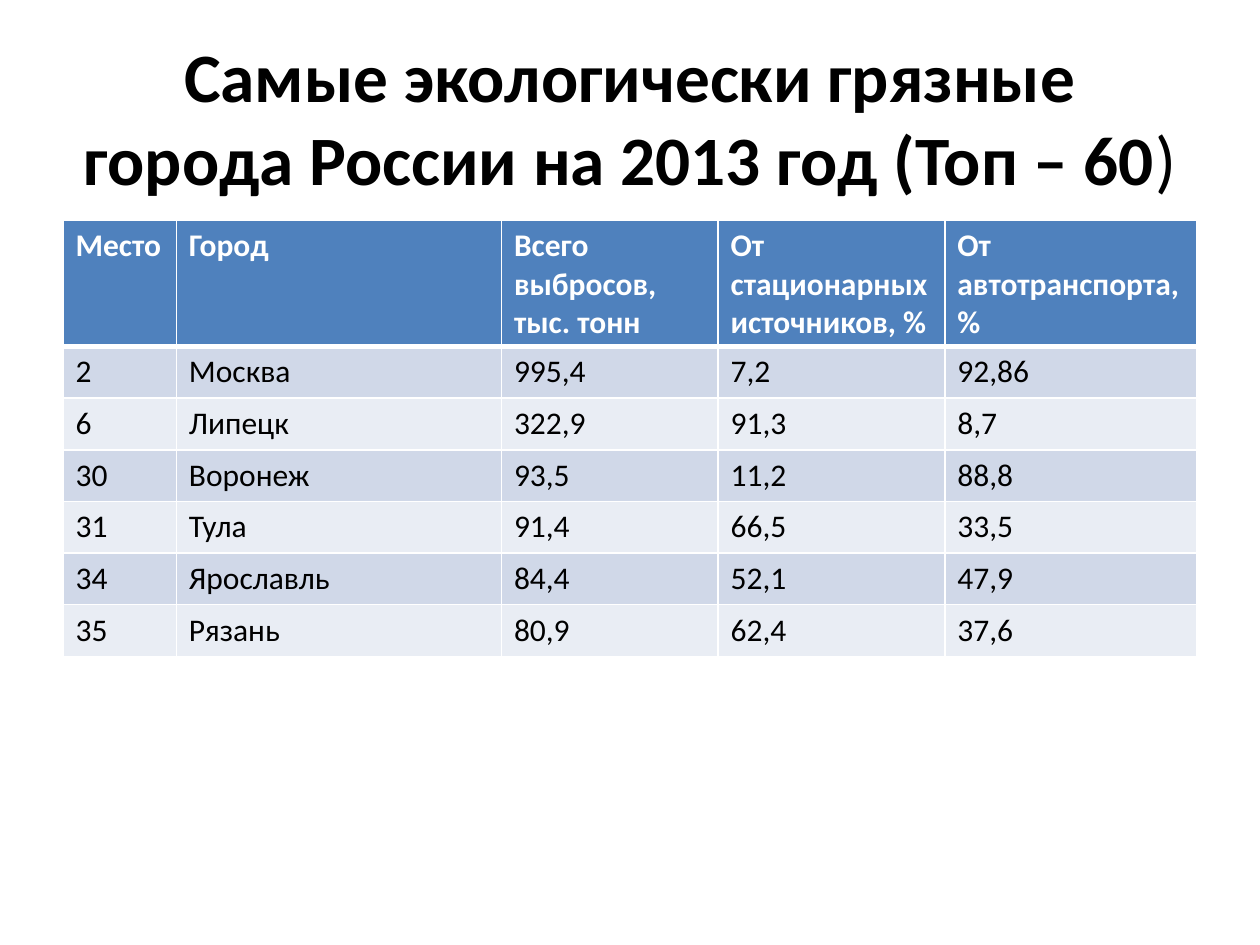
from dataclasses import dataclass

from lxml.etree import SubElement as Sub
from pptx import Presentation
from pptx.dml.color import RGBColor as Rgb
from pptx.enum.text import MSO_ANCHOR as Anchor, PP_ALIGN as Align
from pptx.oxml.ns import qn
from pptx.util import Inches, Pt

WIDE, HIGH = 10, 7.5
FONT = "Calibri"
WHITE, BLACK, BLUE = "FFFFFF", "000000", "4F81BD"
BANDS = ("D0D8E8", "E9EDF4")


@dataclass
class Column:
    head: str
    width: float  # share of the slide's width
    items: tuple[str, ...]


COLUMNS = [
    Column("Место", 0.09, ("2", "6", "30", "31", "34", "35")),
    Column("Город", 0.258,
           ("Москва", "Липецк", "Воронеж", "Тула", "Ярославль", "Рязань")),
    Column("Всего выбросов, тыс. тонн", 0.172,
           ("995,4", "322,9", "93,5", "91,4", "84,4", "80,9")),
    Column("От стационарных источников, %", 0.18,
           ("7,2", "91,3", "11,2", "66,5", "52,1", "62,4")),
    Column("От автотранспорта, %", 0.2,
           ("92,86", "8,7", "88,8", "33,5", "47,9", "37,6")),
]


def across(share: float) -> int:
    return Inches(share * WIDE)


def down(share: float) -> int:
    return Inches(share * HIGH)


def paint(target, color: str) -> None:
    """Set the colour of a fill or a font."""
    if hasattr(target, "solid"):
        target.solid()
        target.fore_color.rgb = Rgb.from_string(color)
    else:
        target.color.rgb = Rgb.from_string(color)


def style(run, size: float, color: str, bold: bool) -> None:
    font = run.font
    font.name, font.size, font.bold = FONT, Pt(size), bold
    paint(font, color)


def edge(cell, side: str, width: float) -> None:
    """Draw one white cell border; side is L, R, T or B."""
    props = cell._tc.get_or_add_tcPr()
    line = Sub(props, qn(f"a:ln{side}"), w=str(Pt(width)))
    fill = Sub(line, qn("a:solidFill"))
    Sub(fill, qn("a:srgbClr"), val=WHITE)


def draw_title(slide) -> None:
    box = slide.shapes.add_textbox(across(0.05), down(0.04),
                                   across(0.9), down(1 / 6))
    frame = box.text_frame
    frame.word_wrap = True
    frame.vertical_anchor = Anchor.MIDDLE
    frame.text = "Самые экологически грязные города России на 2013 год (Топ – 60"
    para = frame.paragraphs[0]
    para.alignment = Align.CENTER
    para.add_run().text = ")"
    for run, bold in zip(para.runs, (True, False)):
        style(run, 39.6, BLACK, bold)


def draw_cell(cell, text: str, row: int) -> None:
    head = row == 0
    cell.text = text
    style(cell.text_frame.paragraphs[0].runs[0], 18,
          WHITE if head else BLACK, head)
    # The rule under the header is thicker than the others
    edge(cell, "L", 1)
    edge(cell, "R", 1)
    edge(cell, "T", 3 if row == 1 else 1)
    edge(cell, "B", 3 if head else 1)
    paint(cell.fill, BLUE if head else BANDS[(row - 1) % 2])


def draw_table(slide, columns: list[Column]) -> None:
    count = len(columns[0].items) + 1
    step = Inches(0.41)
    table = slide.shapes.add_table(
        count, len(columns), across(0.05), Inches(1.75),
        across(sum(col.width for col in columns)), step * count).table
    for row in table.rows:
        row.height = step
    for i, col in enumerate(columns):
        table.columns[i].width = across(col.width)
        for row, text in enumerate((col.head, *col.items)):
            draw_cell(table.cell(row, i), text, row)


def main() -> None:
    deck = Presentation()
    deck.slide_width, deck.slide_height = Inches(WIDE), Inches(HIGH)
    slide = deck.slides.add_slide(deck.slide_layouts[6])
    paint(slide.background.fill, WHITE)
    draw_title(slide)
    draw_table(slide, COLUMNS)
    deck.save("out.pptx")


if __name__ == "__main__":
    main()
